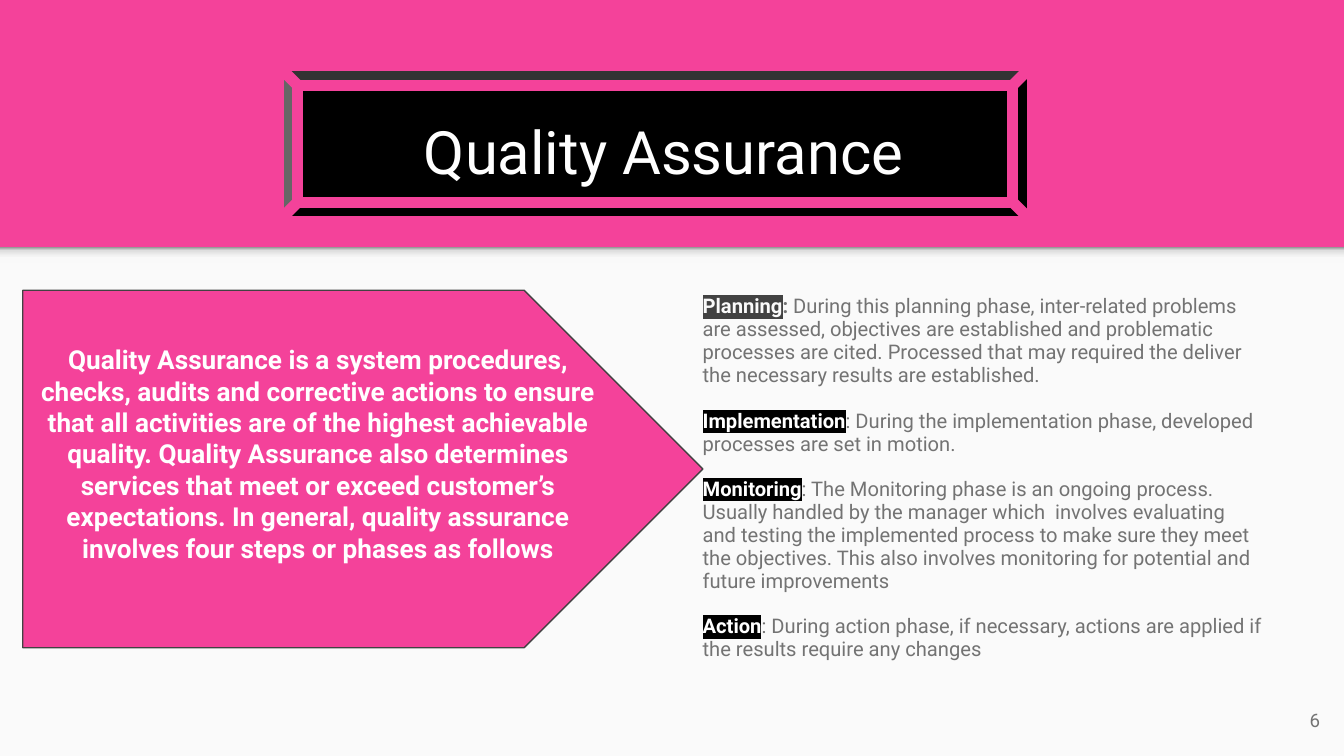
from lxml.etree import SubElement
from pptx import Presentation
from pptx.dml.color import RGBColor
from pptx.enum.shapes import MSO_SHAPE
from pptx.enum.text import MSO_ANCHOR, PP_ALIGN
from pptx.oxml.ns import qn
from pptx.util import Inches, Pt

COLORS = {"pink": "F4429A", "paper": "FAFAFA", "black": "000000",
          "white": "FFFFFF", "dark": "424242", "gray": "737373"}
SHADOW_STOPS = [(0, "F9F9F9"), (36, "F9F9F9"), (80, "DEDEDE"), (100, "999999")]
FONT = "Roboto"
WIDTH = 10
HEIGHT = WIDTH * 9 / 16
BAND = 1.84
INSET = 0.1

TITLE = "Quality Assurance "
SUMMARY = (
    "Quality Assurance is a system procedures, checks, audits and corrective "
    "actions to ensure that all activities are of the highest achievable quality. "
    "Quality Assurance also determines services that meet or exceed customer’s "
    "expectations. In general, quality assurance involves four steps or phases as follows"
)
PHASES = [
    ("Planning", "paper", "dark", ": ",
     "During this planning phase, inter-related problems are assessed, objectives are "
     "established and problematic processes are cited. Processed that may required the "
     "deliver the necessary results are established."),
    ("Implementation", "white", "black", "",
     ": During the implementation phase, developed processes are set in motion."),
    ("Monitoring", "white", "black", "",
     ": The Monitoring phase is an ongoing process. Usually handled by the manager which  "
     "involves evaluating and testing the implemented process to make sure they meet the "
     "objectives. This also involves monitoring for potential and future improvements"),
    ("Action", "white", "black", "",
     ": During action phase, if necessary, actions are applied if the results require "
     "any changes"),
]
PAGE_NUMBER = "6"


def rgb(name):
    return RGBColor.from_string(COLORS[name])


def add_box(page, kind, place, fill, line=None, weight=0):
    box = page.shapes.add_shape(kind, *map(Inches, place))
    box.shadow.inherit = False
    box.fill.solid()
    box.fill.fore_color.rgb = rgb(fill)
    if line:
        box.line.color.rgb = rgb(line)
        box.line.width = Pt(weight)
    else:
        box.line.fill.background()
    return box


def prepare_frame(box, anchor):
    frame = box.text_frame
    frame.word_wrap = True
    frame.vertical_anchor = anchor
    frame.margin_left = frame.margin_right = Inches(INSET)
    frame.margin_top = frame.margin_bottom = Inches(INSET)
    return frame


def style(para, size, color, align=PP_ALIGN.LEFT, bold=False):
    para.alignment = align
    para.font.name = FONT
    para.font.size = Pt(size)
    para.font.bold = bold
    para.font.color.rgb = rgb(color)


def write(box, text, anchor, *look):
    frame = prepare_frame(box, anchor)
    para = frame.paragraphs[0]
    para.text = text
    style(para, *look)
    return frame


def add_span(para, text, color, bold, highlight=None):
    span = para.add_run()
    span.text = text
    span.font.bold = bold
    span.font.color.rgb = rgb(color)
    if highlight:
        mark = SubElement(span.font._element, qn("a:highlight"))
        SubElement(mark, qn("a:srgbClr"), val=COLORS[highlight])


def add_text_box(page, *place):
    return page.shapes.add_textbox(*map(Inches, place))


def add_band_shadow(page):
    box = add_box(page, MSO_SHAPE.RECTANGLE, (0, BAND, WIDTH, 0.12), "paper")
    box.fill.gradient()
    box.fill.gradient_angle = 90
    stops = box._element.spPr.find(".//" + qn("a:gsLst"))
    for stop in list(stops):
        stops.remove(stop)
    for share, color in SHADOW_STOPS:
        stop = SubElement(stops, qn("a:gs"), pos=str(share * 1000))
        SubElement(stop, qn("a:srgbClr"), val=color)


def add_phases(page):
    frame = prepare_frame(add_text_box(page, 5.13, 2.1, 4.37, 2.96), MSO_ANCHOR.TOP)
    for index, (name, color, highlight, colon, text) in enumerate(PHASES):
        para = frame.add_paragraph() if index else frame.paragraphs[0]
        style(para, 10.8, "gray")
        para.line_spacing = 0.95
        para.space_before = Pt(12 if index else 0)
        add_span(para, name, color, True, highlight)
        if colon:
            add_span(para, colon, "gray", True)
        add_span(para, text, "gray", False)


def main():
    deck = Presentation()
    deck.slide_width, deck.slide_height = Inches(WIDTH), Inches(HEIGHT)
    page = deck.slides.add_slide(deck.slide_layouts[6])
    page.background.fill.solid()
    page.background.fill.fore_color.rgb = rgb("pink")

    add_box(page, MSO_SHAPE.RECTANGLE, (0, BAND, WIDTH, HEIGHT - BAND), "paper")
    add_band_shadow(page)

    add_box(page, MSO_SHAPE.BEVEL, (2.07, 0.49, 5.61, 1.16), "black", "pink", 6)
    write(add_text_box(page, 0.5, 0.65, 8.99, 0.84), TITLE,
          MSO_ANCHOR.BOTTOM, 32, "white", PP_ALIGN.CENTER)

    add_phases(page)

    arrow = add_box(page, MSO_SHAPE.PENTAGON, (0.17, 2.16, 5.06, 2.66), "pink", "dark", 0.75)
    frame = write(arrow, SUMMARY, MSO_ANCHOR.MIDDLE, 14, "white", PP_ALIGN.CENTER, True)
    frame.margin_bottom = Inches(INSET + 0.23)

    write(add_text_box(page, 9.32, 5.14, 0.6, 0.43), PAGE_NUMBER,
          MSO_ANCHOR.MIDDLE, 10, "gray", PP_ALIGN.RIGHT)
    deck.save("out.pptx")


if __name__ == "__main__":
    main()
